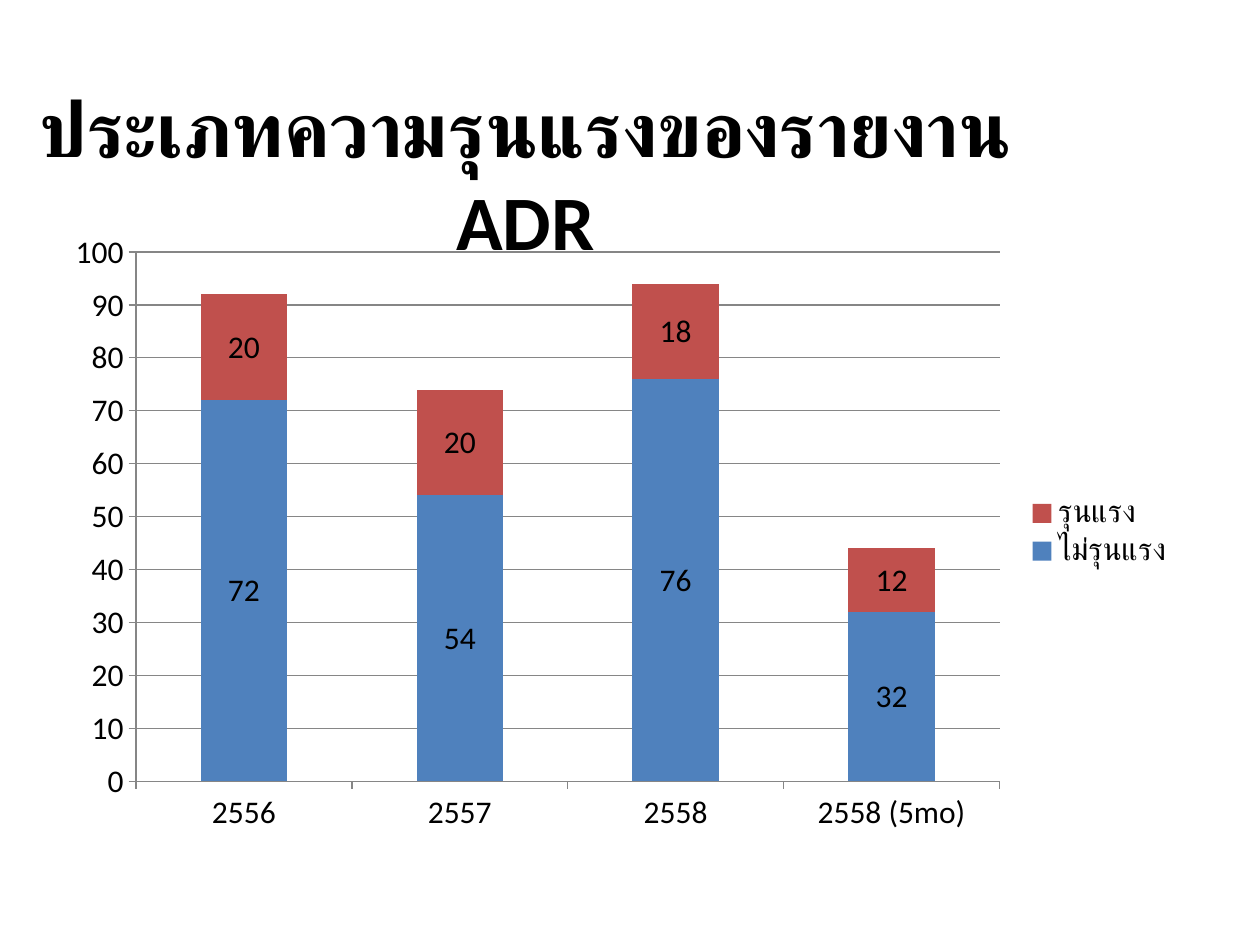
from pptx import Presentation
from pptx.chart.data import CategoryChartData
from pptx.dml.color import RGBColor
from pptx.enum.chart import XL_CHART_TYPE, XL_LEGEND_POSITION, XL_TICK_MARK
from pptx.enum.text import MSO_ANCHOR, PP_ALIGN
from pptx.util import Inches, Pt

BLACK = RGBColor(0x00, 0x00, 0x00)
GRAY = RGBColor(0x86, 0x86, 0x86)
BLUE = RGBColor(0x4F, 0x81, 0xBD)
RED = RGBColor(0xC0, 0x50, 0x4D)

CATEGORIES = ["2556", "2557", "2558", "2558 (5mo)"]
SEVERITIES = [
    ("ไม่รุนแรง", [72, 54, 76, 32], BLUE),
    ("รุนแรง", [20, 20, 18, 12], RED),
]


class SlideBuilder:
    """Holds the text style and the current page."""

    font_name = "Calibri"

    def __init__(self, page):
        self.page = page

    def style(self, font, size, bold=False):
        font.name = self.font_name
        font.size = Pt(size)
        font.bold = bold
        font.color.rgb = BLACK

    def title(self, text, left, top, width, height):
        box = self.page.shapes.add_textbox(
            Inches(left), Inches(top), Inches(width), Inches(height))
        frame = box.text_frame
        frame.word_wrap = True
        frame.vertical_anchor = MSO_ANCHOR.MIDDLE
        frame.text = text
        para = frame.paragraphs[0]
        para.alignment = PP_ALIGN.CENTER
        self.style(para.runs[0].font, 44, bold=True)

    def stacked_columns(self, categories, series_rows, left, top, width, height):
        data = CategoryChartData()
        data.categories = categories
        for name, values, _ in series_rows:
            data.add_series(name, values)
        chart = self.page.shapes.add_chart(
            XL_CHART_TYPE.COLUMN_STACKED, Inches(left), Inches(top),
            Inches(width), Inches(height), data).chart
        self.style(chart.font, 18)
        chart.has_title = False
        chart.has_legend = True
        chart.legend.position = XL_LEGEND_POSITION.RIGHT
        chart.legend.include_in_layout = False

        for axis in (chart.category_axis, chart.value_axis):
            axis.major_tick_mark = XL_TICK_MARK.OUTSIDE
            axis.minor_tick_mark = XL_TICK_MARK.NONE
            axis.format.line.color.rgb = GRAY
        value_axis = chart.value_axis
        value_axis.minimum_scale = 0
        value_axis.maximum_scale = 100
        value_axis.major_unit = 10
        value_axis.has_major_gridlines = True
        value_axis.major_gridlines.format.line.color.rgb = GRAY

        plot = chart.plots[0]
        plot.gap_width = 150
        plot.overlap = 100
        plot.vary_by_categories = False
        for series, (_, _, color) in zip(plot.series, series_rows):
            series.format.fill.solid()
            series.format.fill.fore_color.rgb = color
            series.data_labels.show_value = True


def main():
    deck = Presentation()
    deck.slide_width = Inches(10)
    deck.slide_height = Inches(7.5)
    page = deck.slides.add_slide(deck.slide_layouts[6])
    builder = SlideBuilder(page)
    builder.title("ประเภทความรุนแรงของรายงาน ADR", -0.33, 0.75, 9, 1.25)
    builder.stacked_columns(CATEGORIES, SEVERITIES, 0.42, 1.75, 9, 4.95)
    deck.save("out.pptx")


if __name__ == "__main__":
    main()
